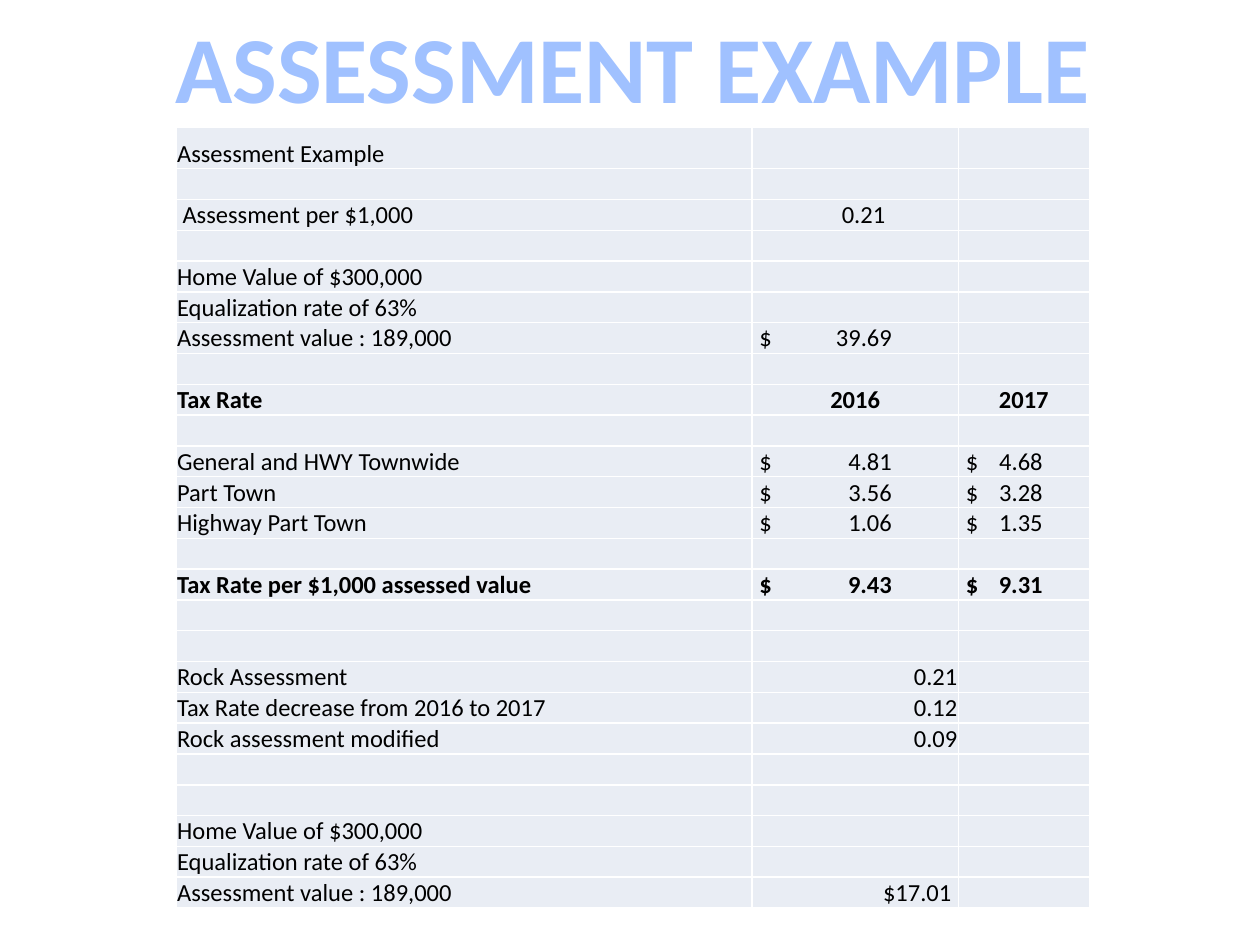
"""Build the assessment example slide with its tax rate table."""
from lxml.etree import SubElement
from pptx import Presentation
from pptx.dml.color import RGBColor
from pptx.enum.text import MSO_ANCHOR as Anchor, PP_ALIGN as Align
from pptx.oxml.ns import qn
from pptx.util import Cm, Pt


def style_runs(para, size, color, bold):
    for span in para.runs:
        span.font.name = "Calibri"
        span.font.size = Pt(size)
        span.font.bold = bold
        span.font.color.rgb = RGBColor.from_string(color)


def add_right_tab(para, position):
    tabs = SubElement(para._p.get_or_add_pPr(), qn("a:tabLst"))
    SubElement(tabs, qn("a:tab"), pos=str(position), algn="r")


deck = Presentation()
deck.slide_width, deck.slide_height = Cm(25.4), Cm(19.05)
page = deck.slides.add_slide(deck.slide_layouts[6])

box = page.shapes.add_textbox(Cm(3.18), Cm(0.05), Cm(19.15), Cm(2.57))
box.text_frame.word_wrap = False
box.text_frame.text = "ASSESSMENT EXAMPLE"
title = box.text_frame.paragraphs[0]
title.alignment = Align.CENTER
style_runs(title, 54, "A0C1FF", True)

home = [
    ("Home Value of $300,000", "", ""),
    ("Equalization rate of 63%", "", ""),
]
blank = ("", "", "")
rows = [
    ("Assessment Example", "", ""),
    blank,
    ("Assessment per $1,000", "0.21", ""),
    blank,
    *home,
    ("Assessment value : 189,000", "$\t39.69", ""),
    blank,
    ("Tax Rate", "2016", "2017"),
    blank,
    ("General and HWY Townwide", "$\t4.81", "$\t4.68"),
    ("Part Town", "$\t3.56", "$\t3.28"),
    ("Highway Part Town", "$\t1.06", "$\t1.35"),
    blank,
    ("Tax Rate per $1,000 assessed value", "$\t9.43", "$\t9.31"),
    blank,
    blank,
    ("Rock Assessment", "0.21", ""),
    ("Tax Rate decrease from 2016 to 2017", "0.12", ""),
    ("Rock assessment modified", "0.09", ""),
    blank,
    blank,
    *home,
    ("Assessment value : 189,000", "$17.01", ""),
]
rate_row, year_row, total_row, last_row = 2, 8, 14, len(rows) - 1
tab_stops = [0, Cm(2.67), Cm(1.55)]

frame = page.shapes.add_table(len(rows), 3, Cm(3.55), Cm(2.56), Cm(18.41), Cm(15.75))
table = frame.table
table.first_row = table.horz_banding = False
for column, width in zip(table.columns, (11.61, 4.16, 2.64)):
    column.width = Cm(width)
for row in table.rows:
    row.height = Cm(14.91 / last_row)
table.rows[0].height = Cm(0.84)

for r, texts in enumerate(rows):
    for c, text in enumerate(texts):
        cell = table.cell(r, c)
        cell.fill.solid()
        cell.fill.fore_color.rgb = RGBColor.from_string("E9EDF4")
        cell.vertical_anchor = Anchor.BOTTOM
        cell.margin_left = cell.margin_right = cell.margin_top = Cm(0.02)
        cell.margin_bottom = 0
        para = cell.text_frame.paragraphs[0]
        if not text:
            SubElement(para._p, qn("a:endParaRPr"), sz="1400")
            continue
        para.text = text
        style_runs(para, 14, "000000", r in (year_row, total_row))
        if "\t" in text:
            cell.margin_left = Cm(0.15)
            add_right_tab(para, tab_stops[c])
        elif r == rate_row:
            cell.margin_left = Cm(1.81 if c else 0.13)
        elif c:
            para.alignment = Align.CENTER if r == year_row else Align.RIGHT
            if r == last_row:
                cell.margin_right = Cm(0.14)

deck.save("out.pptx")
